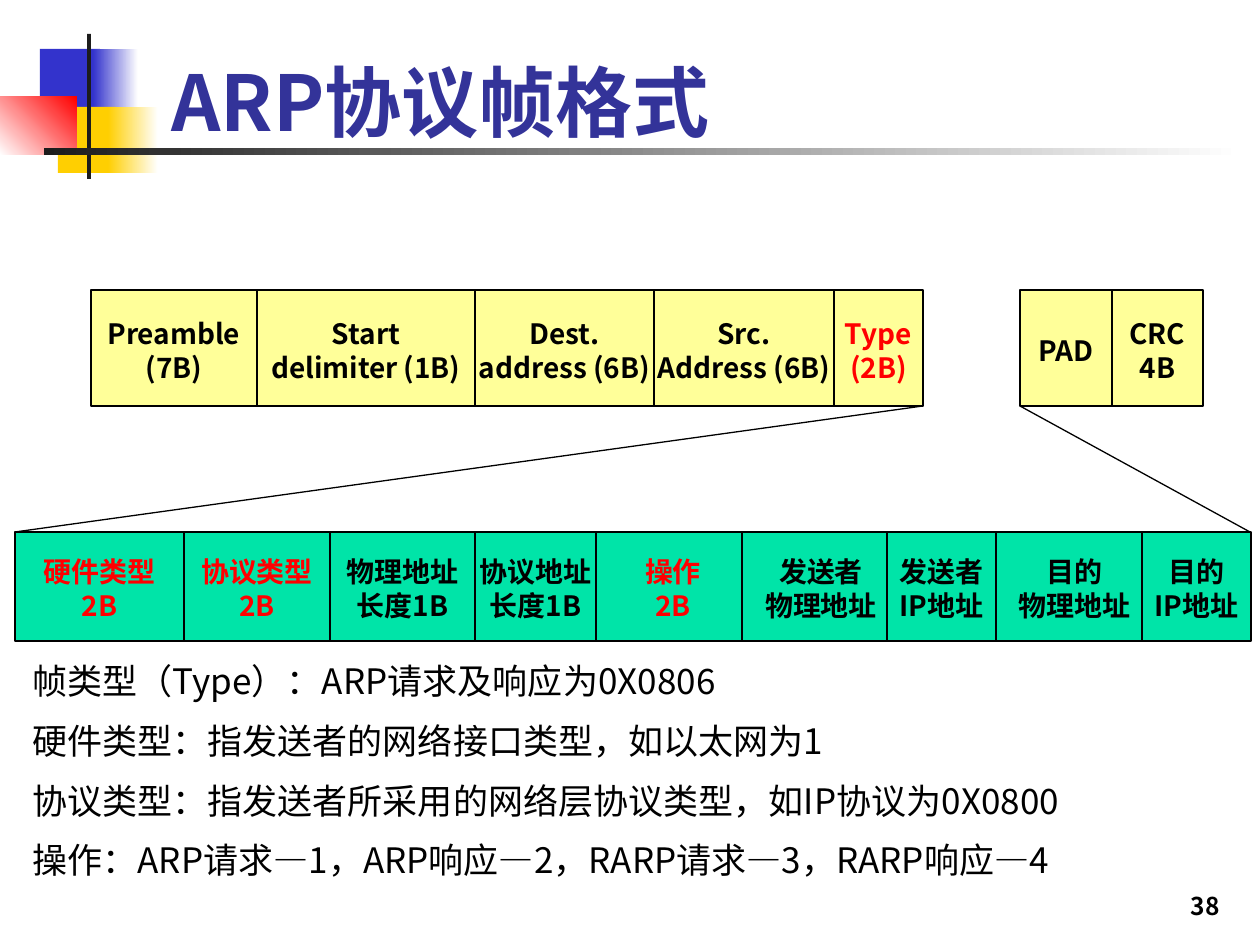
"""Build the ARP frame format slide."""
from lxml import etree
from pptx import Presentation, util as u
from pptx.dml.color import RGBColor
from pptx.enum import shapes, text
from pptx.oxml.ns import qn

PX = 914400 / 126
FONT = "Noto Sans CJK SC"
BLACK = RGBColor(0x00, 0x00, 0x00)
WHITE = RGBColor(0xFF, 0xFF, 0xFF)
RED = RGBColor(0xFF, 0x00, 0x00)
BLUE = RGBColor(0x33, 0x33, 0xCC)
GOLD = RGBColor(0xFF, 0xCF, 0x01)
CHARCOAL = RGBColor(0x1C, 0x1C, 0x1C)
INDIGO = RGBColor(0x33, 0x33, 0x99)
YELLOW = RGBColor(0xFF, 0xFF, 0x99)
GREEN = RGBColor(0x00, 0xE4, 0xA8)

TITLE = "ARP协议帧格式"
PAGE = "38"
ORNAMENTS = [
    ((40, 49, 60, 66), (BLUE,), 0),
    ((93, 49, 45, 66), (BLUE, WHITE), 0),
    ((58, 107, 58, 66), (GOLD,), 0),
    ((108, 107, 50, 66), (GOLD, WHITE), 0),
    ((0, 97, 77, 58), (WHITE, RED), 45),
    ((87, 34, 4, 145), (CHARCOAL,), 0),
    ((44, 148, 1198, 7), (CHARCOAL, WHITE), 0),
]
FRAME_TOP, FRAME_HEIGHT = 290, 116
ARP_TOP, ARP_HEIGHT = 532, 109
FRAME_FIELDS = [
    (91, 166, ["Preamble", "(7B)"], BLACK),
    (257, 218, ["Start", "delimiter (1B)"], BLACK),
    (475, 179, ["Dest.", "address (6B)"], BLACK),
    (654, 180, ["Src.", "Address (6B)"], BLACK),
    (834, 89, ["Type", "(2B)"], RED),
    (1020, 92, ["PAD"], BLACK),
    (1112, 91, ["CRC", "4B"], BLACK),
]
ARP_FIELDS = [
    (15, 169, ["硬件类型", "2B"], RED),
    (184, 146, ["协议类型", "2B"], RED),
    (330, 145, ["物理地址", "长度1B"], BLACK),
    (475, 121, ["协议地址", "长度1B"], BLACK),
    (596, 154, ["操作", "2B"], RED),
    (742, 158, ["发送者", "物理地址"], BLACK),
    (887, 109, ["发送者", "IP地址"], BLACK),
    (996, 157, ["目的", "物理地址"], BLACK),
    (1142, 109, ["目的", "IP地址"], BLACK),
]
EXPANSION_LINES = [(923, 15), (1020, 1250)]
NOTES = [
    "帧类型（Type）：ARP请求及响应为0X0806",
    "硬件类型：指发送者的网络接口类型，如以太网为1",
    "协议类型：指发送者所采用的网络层协议类型，如IP协议为0X0800",
    "操作：ARP请求—1，ARP响应—2，RARP请求—3，RARP响应—4",
]


def px(*lengths):
    return [u.Emu(round(length * PX)) for length in lengths]


def write(frame, lines, size, color, bold=True, align=text.PP_ALIGN.LEFT,
          pitch=None, gap=0):
    for index, line in enumerate(lines):
        paragraph = frame.add_paragraph() if index else frame.paragraphs[0]
        paragraph.alignment = align
        paragraph.space_before = u.Pt(gap if index else 0)
        if pitch:
            paragraph.line_spacing = u.Pt(pitch)
        run = paragraph.add_run()
        run.text = line
        run.font.size, run.font.bold, run.font.name = u.Pt(size), bold, FONT
        run.font.color.rgb = color
        etree.SubElement(run.font._element, qn("a:ea"), typeface=FONT)


def add_box(slide, place, colors, angle=0):
    box = slide.shapes.add_shape(shapes.MSO_SHAPE.RECTANGLE, *px(*place))
    box.shadow.inherit = False
    box.line.fill.background()
    if len(colors) == 1:
        box.fill.solid()
        box.fill.fore_color.rgb = colors[0]
    else:
        box.fill.gradient()
        box.fill.gradient_angle = angle
        for stop, color in zip(box.fill.gradient_stops, colors):
            stop.color.rgb = color
    return box


def add_field(slide, place, lines, fill, color):
    field = add_box(slide, place, (fill,))
    field.line.color.rgb = BLACK
    field.line.width = u.Pt(0.75)
    frame = field.text_frame
    frame.word_wrap = False
    frame.vertical_anchor = text.MSO_ANCHOR.MIDDLE
    frame.margin_top, frame.margin_bottom = px(9, 5)
    write(frame, lines, 16, color, align=text.PP_ALIGN.CENTER, pitch=19.3)


def add_line(slide, start, end):
    line = slide.shapes.add_connector(
        shapes.MSO_CONNECTOR.STRAIGHT, *px(*start, *end))
    line.line.color.rgb = BLACK
    line.line.width = u.Pt(0.75)
    etree.SubElement(line._element.spPr, qn("a:effectLst"))


def add_text(slide, place):
    frame = slide.shapes.add_textbox(*px(*place)).text_frame
    frame.word_wrap = True
    return frame


def main():
    deck = Presentation()
    deck.slide_width, deck.slide_height = px(1260, 945)
    slide = deck.slides.add_slide(deck.slide_layouts[5])

    for place, colors, angle in ORNAMENTS:
        add_box(slide, place, colors, angle)

    title = slide.shapes.title
    title.left, title.top, title.width, title.height = px(159, 29, 1073, 118)
    heading = title.text_frame
    heading.auto_size = text.MSO_AUTO_SIZE.NONE
    heading.vertical_anchor = text.MSO_ANCHOR.BOTTOM
    heading.margin_bottom = 0
    write(heading, [TITLE], 44, INDIGO)

    number = add_text(slide, (970, 861, 262, 63))
    number.vertical_anchor = text.MSO_ANCHOR.BOTTOM
    number.margin_bottom = px(4)[0]
    write(number, [PAGE], 14, BLACK, align=text.PP_ALIGN.RIGHT)

    for fields, top, height, fill in (
            (FRAME_FIELDS, FRAME_TOP, FRAME_HEIGHT, YELLOW),
            (ARP_FIELDS, ARP_TOP, ARP_HEIGHT, GREEN)):
        for left, width, lines, color in fields:
            add_field(slide, (left, top, width, height), lines, fill, color)

    for frame_x, arp_x in EXPANSION_LINES:
        add_line(slide, (frame_x, FRAME_TOP + FRAME_HEIGHT), (arp_x, ARP_TOP))

    notes = add_text(slide, (20, 651, 1226, 243))
    notes.margin_top = px(9)[0]
    write(notes, NOTES, 20, BLACK, bold=False, pitch=24, gap=10)

    deck.save("out.pptx")


if __name__ == "__main__":
    main()
